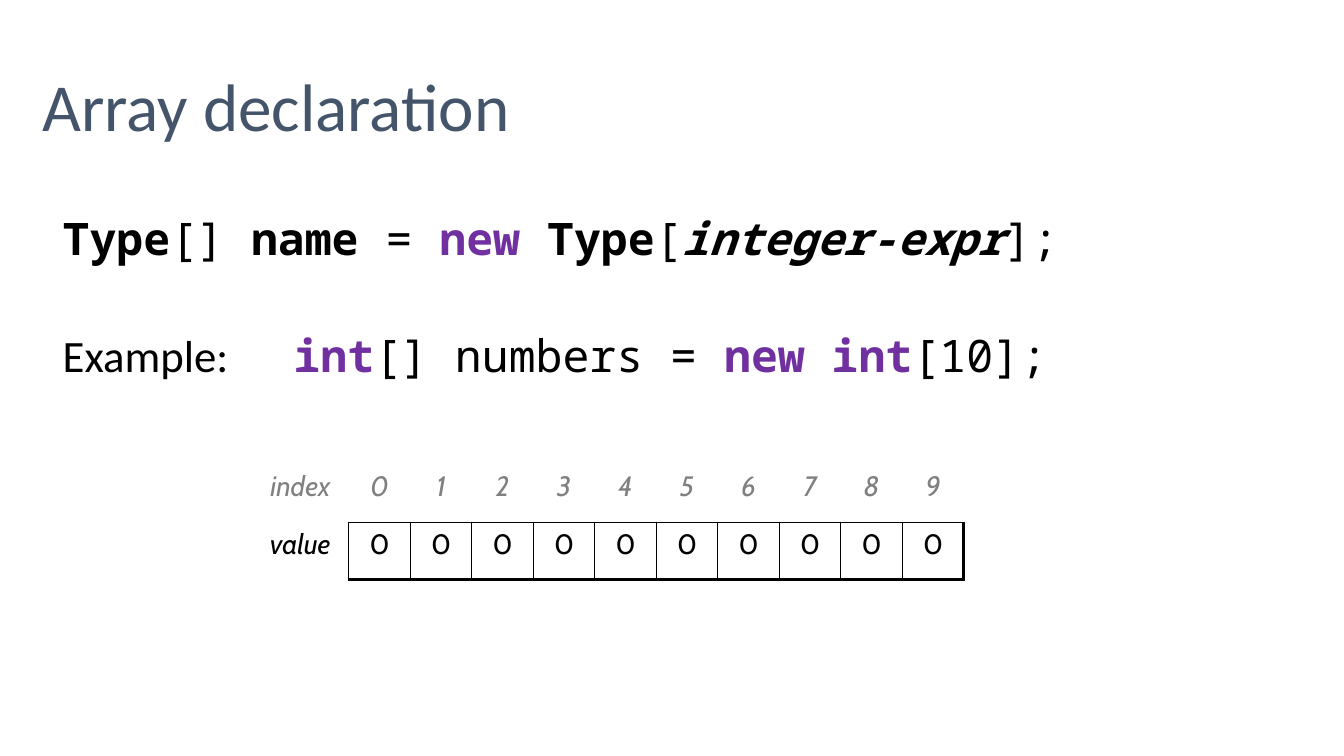
"""Build the slide on array declaration."""
from dataclasses import dataclass

from lxml.etree import SubElement
from pptx import Presentation
from pptx.dml.color import RGBColor
from pptx.enum.text import MSO_ANCHOR, MSO_AUTO_SIZE, PP_ALIGN
from pptx.oxml.ns import qn
from pptx.slide import Slide
from pptx.table import _Cell
from pptx.text.text import Font
from pptx.util import Cm, Pt

BLACK = RGBColor(0x00, 0x00, 0x00)
SLATE = RGBColor(0x44, 0x54, 0x6A)
PURPLE = RGBColor(0x70, 0x30, 0xA0)
GREY = RGBColor(0x80, 0x80, 0x80)

PROSE = "Calibri"
CODE = "Noto Sans Mono"
CELL = "Cabin"

LEFT, WIDTH = Cm(1.07), Cm(31.75)
ARRAY_LENGTH = 10
THIN, THICK = 1, 2.25


@dataclass(frozen=True)
class Token:
    """One stretch of uniformly styled text."""
    text: str
    bold: bool = False
    italic: bool = False
    color: RGBColor = BLACK
    family: str = CODE


@dataclass(frozen=True)
class TableRow:
    """One row of the array table, with its label and values."""
    label: str
    values: list[str]
    color: RGBColor
    italic_values: bool
    boxed: bool


SYNTAX = [
    Token("Type", bold=True),
    Token("[] "),
    Token("name", bold=True),
    Token(" = "),
    Token("new ", bold=True, color=PURPLE),
    Token("Type", bold=True),
    Token("["),
    Token("integer-expr", bold=True, italic=True),
    Token("];"),
]
EXAMPLE = [
    Token("Example:\t", family=PROSE),
    Token("int", bold=True, color=PURPLE),
    Token("[] numbers = "),
    Token("new int", bold=True, color=PURPLE),
    Token("[10];"),
]
ARRAY_ROWS = [
    TableRow("index", [str(i) for i in range(ARRAY_LENGTH)], GREY, True, False),
    TableRow("value", ["0"] * ARRAY_LENGTH, BLACK, False, True),
]


def style(font: Font, family: str, size: float, color: RGBColor,
          bold: bool = False, italic: bool = False) -> None:
    """Set every font property used on the slide."""
    font.name, font.size = family, Pt(size)
    font.bold, font.italic = bold, italic
    font.color.rgb = color


def add_title(slide: Slide, text: str) -> None:
    """Place and format the title placeholder."""
    title = slide.shapes.title
    title.left, title.top, title.width, title.height = LEFT, Cm(0), WIDTH, Cm(3.68)
    frame = title.text_frame
    frame.text = text
    frame.auto_size = MSO_AUTO_SIZE.NONE
    frame.word_wrap = True
    frame.vertical_anchor = MSO_ANCHOR.BOTTOM
    frame.margin_left = frame.margin_right = frame.margin_bottom = 0
    frame.margin_top = Cm(0.13)
    heading = frame.paragraphs[0]
    heading.alignment = PP_ALIGN.LEFT
    heading.line_spacing = 0.9
    style(heading.runs[0].font, PROSE, 48, SLATE)


def add_declarations(slide: Slide, lines: list[list[Token]]) -> None:
    """Write the code lines, spaced apart and sharing one tab stop."""
    frame = slide.shapes.add_textbox(LEFT, Cm(5.33), WIDTH, Cm(5)).text_frame
    frame.word_wrap = True
    frame.margin_left = Cm(0.51)
    for number, tokens in enumerate(lines):
        line = frame.add_paragraph() if number else frame.paragraphs[0]
        line.line_spacing = 0.9
        line.space_before = Pt(49 if number else 0)
        tabs = SubElement(line._p.get_or_add_pPr(), qn("a:tabLst"))
        SubElement(tabs, qn("a:tab"), pos=str(Cm(5.82)), algn="l")
        for token in tokens:
            run = line.add_run()
            run.text = token.text
            style(run.font, token.family, 32, token.color, token.bold, token.italic)


def set_borders(cell: _Cell, widths: dict[str, float]) -> None:
    """Draw black borders on the given sides and clear the others."""
    properties = cell._tc.get_or_add_tcPr()
    for side in "LRTB":
        border = SubElement(properties, qn(f"a:ln{side}"))
        if side in widths:
            border.set("w", str(Pt(widths[side])))
            fill = SubElement(border, qn("a:solidFill"))
            SubElement(fill, qn("a:srgbClr"), val=str(BLACK))
        else:
            SubElement(border, qn("a:noFill"))


def borders_for(row: TableRow, column: int) -> dict[str, float]:
    """Give the border widths of a cell by its row and column."""
    if column == 0:
        return {"R": THIN} if row.boxed else {}
    if not row.boxed:
        return {"B": THIN}
    right = THICK if column == ARRAY_LENGTH else THIN
    return {"L": THIN, "R": right, "T": THIN, "B": THICK}


def add_array(slide: Slide, rows: list[TableRow]) -> None:
    """Draw the array as a table of indexes and values."""
    label_width, value_width, row_height = Cm(2.44), Cm(1.55), Cm(1.45)
    array = slide.shapes.add_table(
        len(rows), ARRAY_LENGTH + 1, Cm(6.35), Cm(11.71),
        label_width + ARRAY_LENGTH * value_width, len(rows) * row_height).table
    array.first_row = array.horz_banding = False
    for column, grid_column in enumerate(array.columns):
        grid_column.width = value_width if column else label_width
    for index, row in enumerate(rows):
        array.rows[index].height = row_height
        for column, text in enumerate([row.label, *row.values]):
            cell = array.cell(index, column)
            set_borders(cell, borders_for(row, column))
            cell.fill.background()
            entry = cell.text_frame.paragraphs[0]
            entry.text = text
            entry.alignment = PP_ALIGN.CENTER
            italic = column == 0 or row.italic_values
            style(entry.runs[0].font, CELL, 20, row.color, italic=italic)


def main() -> None:
    """Build and save the presentation."""
    presentation = Presentation()
    presentation.slide_width, presentation.slide_height = Cm(33.87), Cm(19.05)
    slide = presentation.slides.add_slide(presentation.slide_layouts[5])
    add_title(slide, "Array declaration")
    add_declarations(slide, [SYNTAX, EXAMPLE])
    add_array(slide, ARRAY_ROWS)
    presentation.save("out.pptx")


if __name__ == "__main__":
    main()
